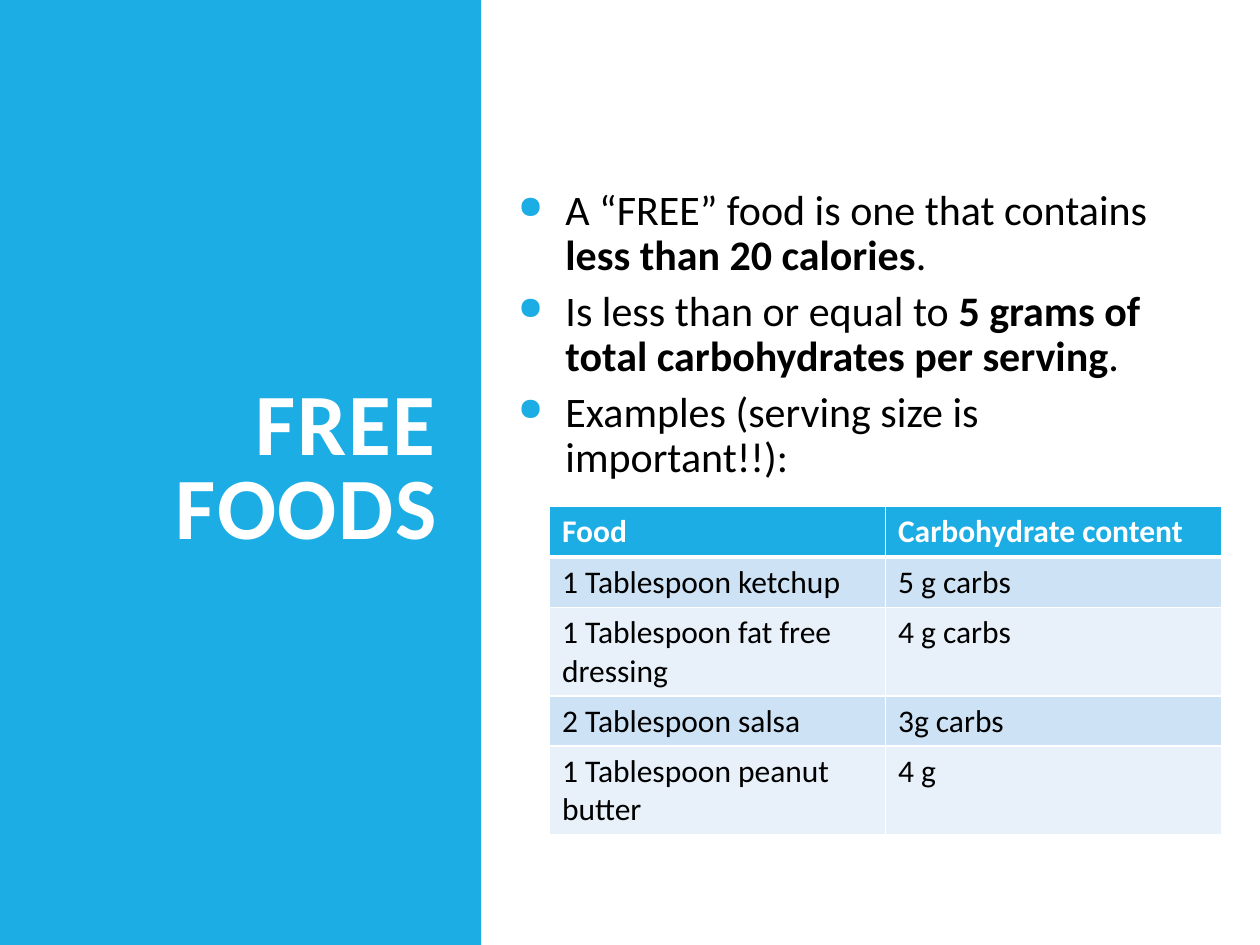
from lxml import etree
from pptx import Presentation
from pptx.dml.color import RGBColor
from pptx.enum import shapes, text
from pptx.oxml import parse_xml
from pptx.oxml.ns import nsdecls
from pptx.util import Pt

BLUE, WHITE, BLACK = "1CADE4", "FFFFFF", "000000"
BANDS = ("E8F1FA", "CDE3F5")
BULLETS = [
    [("A “FREE” food is one that contains ", False),
     ("less than 20 calories", True), (".", False)],
    [("Is less than or equal to ", False),
     ("5 grams of total carbohydrates per serving", True), (".", False)],
    [("Examples (serving size is important!!):", False)],
]
FOODS = [
    ("Food", "Carbohydrate content"),
    ("1 Tablespoon ketchup", "5 g carbs"),
    ("1 Tablespoon fat free dressing", "4 g carbs"),
    ("2 Tablespoon salsa", "3g carbs"),
    ("1 Tablespoon peanut butter", "4 g"),
]
ROW_HEIGHTS = (28, 28, 50, 28, 50)


def color(value):
    return RGBColor.from_string(value)


def apply(obj, values):
    for name, value in values.items():
        setattr(obj, name, value)


def fill(obj, value):
    obj.fill.solid()
    obj.fill.fore_color.rgb = color(value)


def add_run(p, words, size, hue, bold=False):
    r = p.add_run()
    r.text = words
    apply(r.font, {"name": "Calibri", "size": Pt(size), "bold": bold})
    r.font.color.rgb = color(hue)
    return r


def add_panel(s, *box):
    sp = s.shapes.add_shape(shapes.MSO_SHAPE.RECTANGLE, *map(Pt, box))
    sp.shadow.inherit = False
    sp.line.fill.background()
    fill(sp, BLUE)


def add_text_frame(s, box, values):
    tf = s.shapes.add_textbox(*map(Pt, box)).text_frame
    apply(tf, {"word_wrap": True, **values})
    return tf


def add_title(s, words, *box):
    tf = add_text_frame(s, box, {"vertical_anchor": text.MSO_ANCHOR.MIDDLE})
    p = tf.paragraphs[0]
    apply(p, {"alignment": text.PP_ALIGN.RIGHT, "line_spacing": 0.8,
              "space_after": Pt(6)})
    r = add_run(p, words, 50, WHITE, True)
    r.font._element.set("spc", "100")


def set_bullet(p):
    pPr = p._p.get_or_add_pPr()
    pPr.set("marL", str(Pt(27)))
    pPr.set("indent", str(-Pt(27)))
    ns = nsdecls("a")
    for xml in (f'<a:buClr {ns}><a:srgbClr val="{BLUE}"/></a:buClr>',
                f'<a:buSzPct {ns} val="75000"/>',
                f'<a:buChar {ns} char="●"/>'):
        pPr.append(parse_xml(xml))


def add_bullets(s, items, *box):
    tf = add_text_frame(s, box, {
        "vertical_anchor": text.MSO_ANCHOR.TOP, "margin_top": Pt(108),
        "margin_left": Pt(3.6), "margin_right": Pt(3.6)})
    for i, runs in enumerate(items):
        p = tf.add_paragraph() if i else tf.paragraphs[0]
        apply(p, {"line_spacing": 0.9, "space_after": Pt(6)})
        set_bullet(p)
        for words, bold in runs:
            add_run(p, words, 24, BLACK, bold)


def set_borders(cell, bottom):
    tcPr = cell._tc.get_or_add_tcPr()
    for side, width in zip("LRTB", (1, 1, 1, bottom)):
        tcPr.append(parse_xml(
            f'<a:ln{side} {nsdecls("a")} w="{Pt(width)}"><a:solidFill>'
            f'<a:srgbClr val="{WHITE}"/></a:solidFill></a:ln{side}>'))


def add_food_table(s, rows, *box):
    table = s.shapes.add_table(len(rows), len(rows[0]), *map(Pt, box)).table
    for row, height in zip(table.rows, ROW_HEIGHTS):
        row.height = Pt(height)
    for i, row in enumerate(rows):
        header = i == 0
        for j, words in enumerate(row):
            cell = table.cell(i, j)
            set_borders(cell, 3 if header else 1)
            if i == 1:
                top = cell._tc.tcPr.find("{*}lnT")
                top.set("w", str(Pt(3)))
            fill(cell, BLUE if header else BANDS[i % 2])
            add_run(cell.text_frame.paragraphs[0], words, 18,
                    WHITE if header else BLACK, header)


def main():
    prs = Presentation()
    apply(prs, {"slide_width": Pt(720), "slide_height": Pt(540)})
    s = prs.slides.add_slide(prs.slide_layouts[6])
    add_panel(s, 0, 0, 275, 540)
    add_title(s, "FREE FOODS", 57, 63.5, 200, 413)
    add_bullets(s, BULLETS, 292.5, 0, 372, 476.5)
    add_food_table(s, FOODS, 314, 289.5, 384, sum(ROW_HEIGHTS))
    prs.save("out.pptx")


if __name__ == "__main__":
    main()
